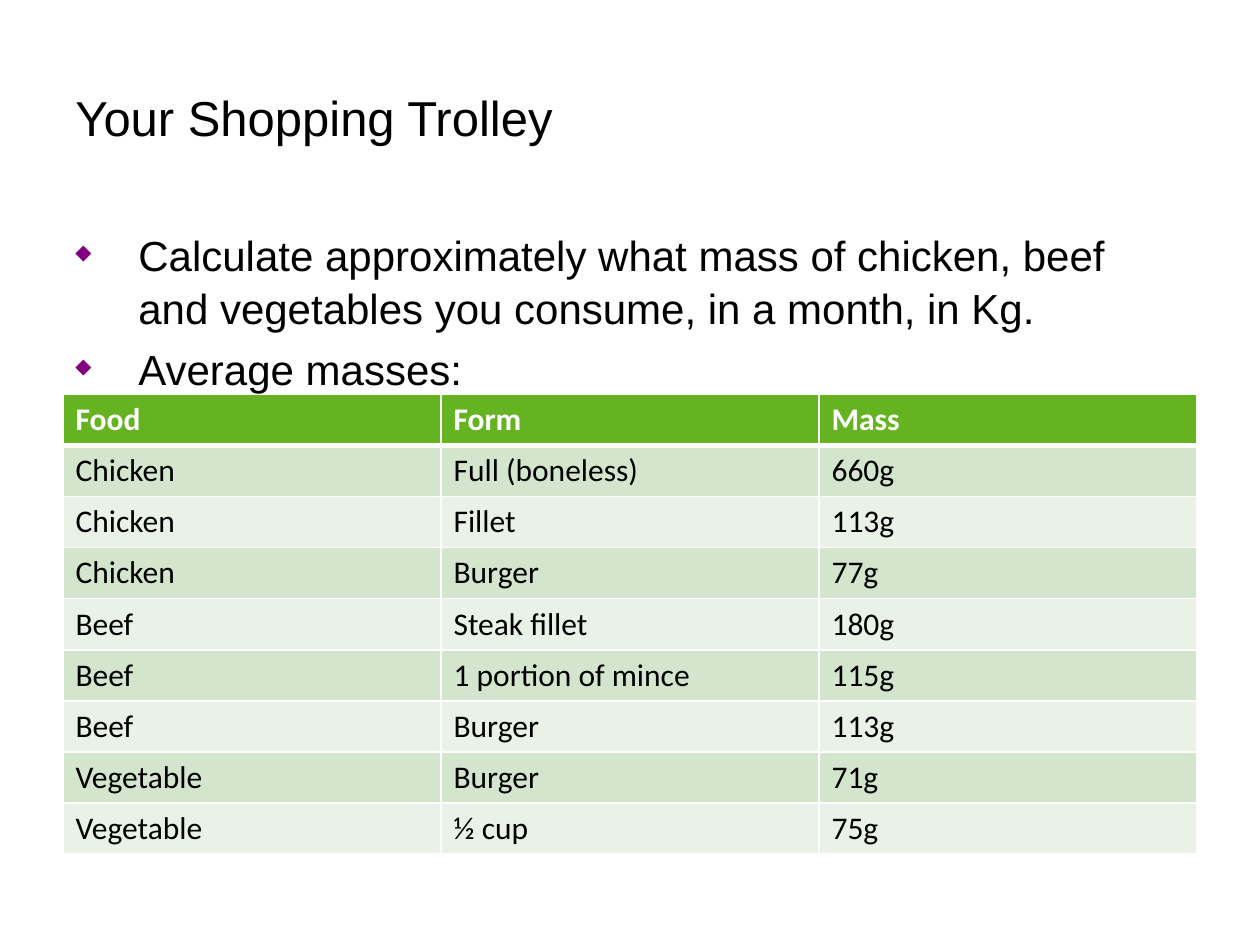
from dataclasses import dataclass

from lxml import etree
from pptx import Presentation
from pptx.dml.color import RGBColor
from pptx.enum.text import MSO_ANCHOR
from pptx.oxml.ns import qn
from pptx.util import Inches, Pt

MIDDLE, TOP = MSO_ANCHOR.MIDDLE, MSO_ANCHOR.TOP


@dataclass(frozen=True)
class Theme:
    text: str = "000000"
    white: str = "FFFFFF"
    bullet: str = "800080"
    header: str = "66B322"
    bands: tuple[str, str] = ("D3E5CD", "EAF2E8")
    text_font: str = "Arial"
    table_font: str = "Calibri"
    title_size: int = 28
    body_size: int = 24
    table_size: int = 18


@dataclass(frozen=True)
class Box:
    left: float
    top: float
    width: float
    height: float

    def lengths(self) -> tuple:
        return tuple(map(Inches, (self.left, self.top, self.width, self.height)))


@dataclass(frozen=True)
class Portion:
    food: str
    form: str
    mass: str

    def values(self) -> tuple[str, str, str]:
        return self.food, self.form, self.mass


THEME = Theme()
TITLE_BOX = Box(0.5, 0.3, 5.65, 1.25)
BODY_BOX = Box(0.5, 1.75, 9, 4.08)
TABLE_BOX = Box(0.5, 3.13, 9, 3.65)

TASKS = (
    "Calculate approximately what mass of chicken, beef and vegetables "
    "you consume, in a month, in Kg.",
    "Average masses:",
)
HEADINGS = Portion("Food", "Form", "Mass")
PORTIONS = (
    Portion("Chicken", "Full (boneless)", "660g"),
    Portion("Chicken", "Fillet", "113g"),
    Portion("Chicken", "Burger", "77g"),
    Portion("Beef", "Steak fillet", "180g"),
    Portion("Beef", "1 portion of mince", "115g"),
    Portion("Beef", "Burger", "113g"),
    Portion("Vegetable", "Burger", "71g"),
    Portion("Vegetable", "½ cup", "75g"),
)


def style_runs(paragraph, font: str, size: int, color: str, bold: bool = False) -> None:
    for run in paragraph.runs:
        run.font.name = font
        run.font.size = Pt(size)
        run.font.bold = bold
        run.font.color.rgb = RGBColor.from_string(color)


def add_text(slide, box: Box, lines: tuple[str, ...], size: int, anchor):
    frame = slide.shapes.add_textbox(*box.lengths()).text_frame
    frame.word_wrap = True
    frame.vertical_anchor = anchor
    frame.text = "\n".join(lines)
    for paragraph in frame.paragraphs:
        style_runs(paragraph, THEME.text_font, size, THEME.text)
    return frame


def add_bullet(paragraph) -> None:
    properties = paragraph._p.get_or_add_pPr()
    properties.set("marL", str(Inches(0.5)))
    properties.set("indent", str(Inches(-0.5)))
    color = etree.SubElement(properties, qn("a:buClr"))
    etree.SubElement(color, qn("a:srgbClr"), val=THEME.bullet)
    etree.SubElement(properties, qn("a:buSzPct"), val="50000")
    etree.SubElement(properties, qn("a:buChar"), char="◆")


def set_borders(cell, bottom_width: float) -> None:
    # Borders come before the fill in the cell properties
    properties = cell._tc.get_or_add_tcPr()
    widths = {"a:lnL": 1, "a:lnR": 1, "a:lnT": 1, "a:lnB": bottom_width}
    for side, width in widths.items():
        line = etree.SubElement(properties, qn(side), w=str(Pt(width)))
        fill = etree.SubElement(line, qn("a:solidFill"))
        etree.SubElement(fill, qn("a:srgbClr"), val=THEME.white)


def fill_row(row, portion: Portion, fill: str, color: str, is_header: bool) -> None:
    for cell, value in zip(row.cells, portion.values()):
        set_borders(cell, 3 if is_header else 1)
        cell.fill.solid()
        cell.fill.fore_color.rgb = RGBColor.from_string(fill)
        cell.text_frame.text = value
        style_runs(cell.text_frame.paragraphs[0], THEME.table_font,
                   THEME.table_size, color, is_header)


def add_portion_table(slide) -> None:
    rows = len(PORTIONS) + 1
    columns = len(HEADINGS.values())
    table = slide.shapes.add_table(rows, columns, *TABLE_BOX.lengths()).table
    fill_row(table.rows[0], HEADINGS, THEME.header, THEME.white, True)
    for index, portion in enumerate(PORTIONS):
        band = THEME.bands[index % len(THEME.bands)]
        fill_row(table.rows[index + 1], portion, band, THEME.text, False)


def main() -> None:
    presentation = Presentation()
    presentation.slide_width = Inches(10)
    presentation.slide_height = Inches(7.5)
    slide = presentation.slides.add_slide(presentation.slide_layouts[6])

    # Title
    add_text(slide, TITLE_BOX, ("Your Shopping Trolley",), THEME.title_size, MIDDLE)

    # Tasks
    tasks = add_text(slide, BODY_BOX, TASKS, THEME.body_size, TOP)
    for index, paragraph in enumerate(tasks.paragraphs):
        add_bullet(paragraph)
        paragraph.line_spacing = 1.05
        if index:
            paragraph.space_before = Pt(0.2 * THEME.body_size)

    # Average masses
    add_portion_table(slide)

    presentation.save("out.pptx")


if __name__ == "__main__":
    main()
